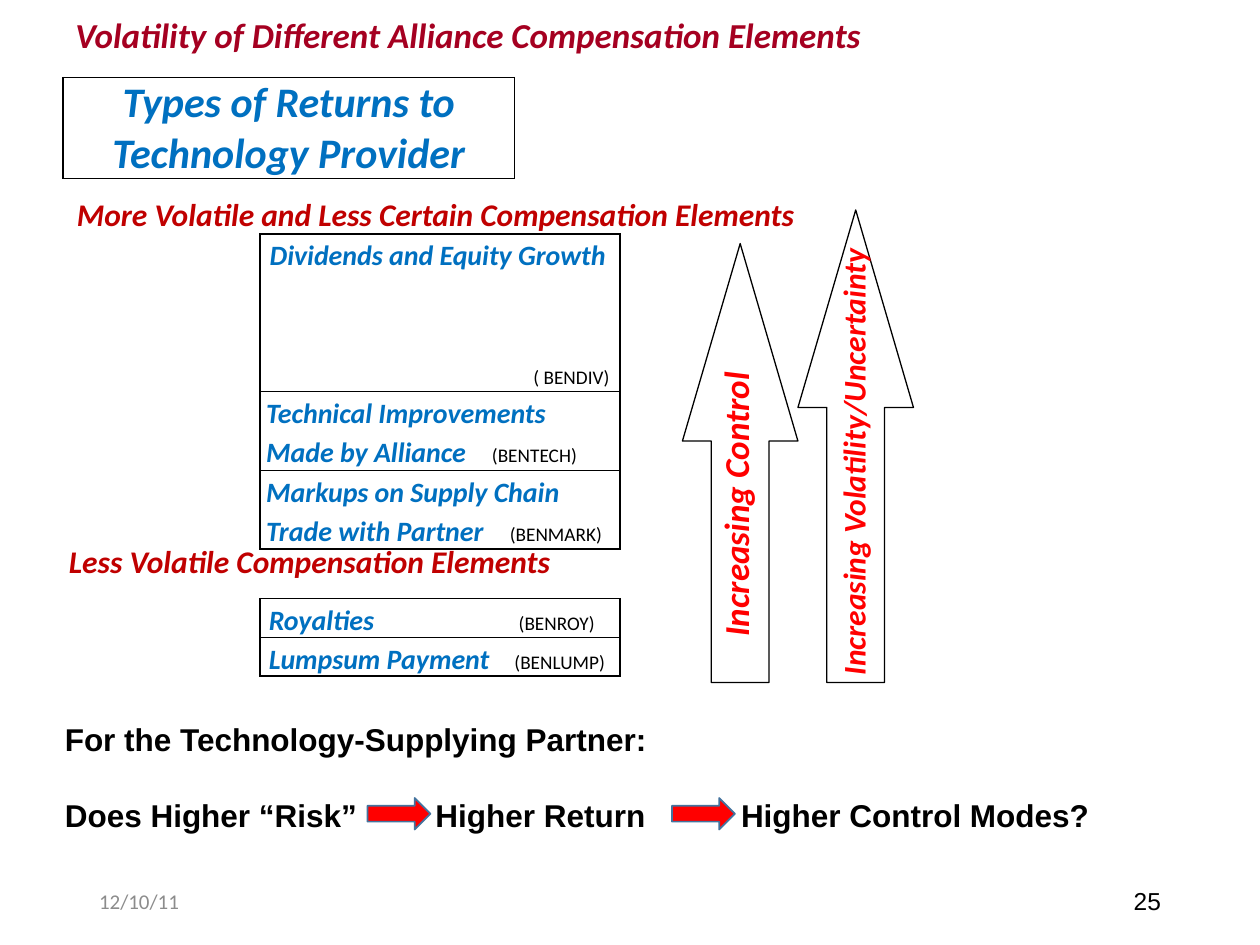
import pptx
import pptx.util
import pptx.dml.color
import pptx.enum.shapes
import pptx.enum.text
from dataclasses import dataclass
from typing import NamedTuple
from lxml import etree

Pt = pptx.util.Pt
ALIGN = pptx.enum.text.PP_ALIGN
MID = pptx.enum.text.MSO_ANCHOR.MIDDLE
SHAPE = pptx.enum.shapes.MSO_SHAPE
NS = "http://schemas.openxmlformats.org/drawingml/2006/main"

# Grid of 120 columns by 90 rows
UNIT = pptx.util.Inches(1 / 12)
COLS, ROWS = 120, 90


@dataclass(frozen=True)
class Theme:
    font: str = "Calibri"
    plain: str = "Arial"
    title: str = "A50021"
    head: str = "C00000"
    item: str = "0070C0"
    alert: str = "FF0000"
    ink: str = "000000"
    paper: str = "FFFFFF"
    muted: str = "8C8C8C"
    edge: str = "43739E"
    big: int = 24
    large: int = 20
    mid: int = 18
    body: int = 16
    page: int = 14
    date: int = 12
    code: int = 11


T = Theme()


class Box(NamedTuple):
    x: float
    y: float
    w: float
    h: float


class Run(NamedTuple):
    text: str
    size: int
    color: str
    bold: bool = True
    slant: bool = True
    font: str = T.font


class Item(NamedTuple):
    name: str
    code: str
    rows: float
    stop: float = 0  # tab stop of the code; none puts it on its own line


def grid(*vals: float) -> list[int]:
    return [round(v * UNIT) for v in vals]


def rgb(color: str):
    return pptx.dml.color.RGBColor.from_string(color)


def write(frame, *runs: Run, new=True, align=ALIGN.LEFT, lead=None, gap=0, stops=()):
    """Add one paragraph of runs; new=True fills the first paragraph."""
    para = frame.paragraphs[0] if new else frame.add_paragraph()
    para.alignment = align
    if lead:
        para.line_spacing = lead
    para.space_before = Pt(gap)
    for spec in runs:
        run = para.add_run()
        run.text = spec.text
        font = run.font
        font.name, font.size = spec.font, Pt(spec.size)
        font.bold, font.italic = spec.bold, spec.slant
        font.color.rgb = rgb(spec.color)
    if stops:
        tabs = etree.SubElement(para._p.get_or_add_pPr(), f"{{{NS}}}tabLst")
        for pos in grid(*stops):
            etree.SubElement(tabs, f"{{{NS}}}tab", pos=str(pos), algn="l")


def label(slide, box: Box, *runs: Run, turn=0, anchor=None, **fmt):
    shape = slide.shapes.add_textbox(*grid(*box))
    shape.rotation = turn
    frame = shape.text_frame
    frame.word_wrap = True
    if anchor is not None:
        frame.vertical_anchor = anchor
    write(frame, *runs, **fmt)
    return frame


def arrow(slide, kind, box: Box, fill: str, line: str, width: float, head=None):
    shape = slide.shapes.add_shape(kind, *grid(*box))
    shape.shadow.inherit = False
    shape.fill.solid()
    shape.fill.fore_color.rgb = rgb(fill)
    shape.line.color.rgb = rgb(line)
    shape.line.width = Pt(width)
    if head:
        shape.adjustments[1] = head


def frames(slide, x: float, y: float, w: float, rows: list[float], left: float, right: float):
    """Add a one-column bordered table and return its text frames."""
    table = slide.shapes.add_table(len(rows), 1, *grid(x, y, w, sum(rows))).table
    table.first_row = table.horz_banding = False
    out = []
    for i, high in enumerate(rows):
        table.rows[i].height = grid(high)[0]
        cell = table.cell(i, 0)
        cell.margin_left, cell.margin_right = grid(left, right)
        cell.margin_top = cell.margin_bottom = 0
        cell.fill.background()
        props = cell._tc.get_or_add_tcPr()
        for n, side in enumerate(("lnL", "lnR", "lnT", "lnB")):
            line = etree.Element(f"{{{NS}}}{side}", w=str(Pt(1)))
            fill = etree.SubElement(line, f"{{{NS}}}solidFill")
            etree.SubElement(fill, f"{{{NS}}}srgbClr", val=T.ink)
            props.insert(n, line)
        out.append(cell.text_frame)
    return out


def stack(slide, y: float, items: list[Item], left: float, right: float):
    cells = frames(slide, 24.75, y, 34.3, [i.rows for i in items], left, right)
    for frame, item in zip(cells, items):
        name = Run(item.name, T.body, T.item)
        code = Run(item.code, T.code, T.ink, False, False)
        if item.stop:
            name = name._replace(text=item.name + "\t")
            write(frame, name, code, lead=1.15, stops=[item.stop])
        else:
            write(frame, name, align=ALIGN.CENTER, lead=1.15)
            write(frame, code, new=False, align=ALIGN.RIGHT, lead=1.15, gap=51)


def main():
    deck = pptx.Presentation()
    deck.slide_width, deck.slide_height = grid(COLS, ROWS)
    slide = deck.slides.add_slide(deck.slide_layouts[6])

    # Footer and title
    label(slide, Box(8.25, 83.4, 27, 4.8),
          Run("12/10/11", T.date, T.muted, False, False), anchor=MID)
    label(slide, Box(84.75, 83.4, 27, 4.8),
          Run("25", T.page, T.ink, False, False, T.plain), anchor=MID, align=ALIGN.RIGHT)
    label(slide, Box(6, 0, 108, 7),
          Run("Volatility of Different Alliance Compensation Elements", T.large, T.title),
          anchor=MID, lead=0.9)

    # Tables of returns
    head, = frames(slide, 6, 7.4, 43, [9.6], 0.6, 0.6)
    write(head, Run("Types of Returns to Technology Provider", T.big, T.item), align=ALIGN.CENTER)
    stack(slide, 22.3, [
        Item("Dividends and Equity Growth", "( BENDIV)", 15),
        Item("Technical Improvements Made by Alliance", "(BENTECH)", 7.5, 21.5),
        Item("Markups on Supply Chain Trade with Partner", "(BENMARK)", 7.5, 23.2),
    ], 0.6, 1)
    stack(slide, 57, [
        Item("Royalties", "(BENROY)", 3.7, 23.8),
        Item("Lumpsum Payment", "(BENLUMP)", 3.7, 23.4),
    ], 0.85, 0.85)

    # Headings of the two groups
    for box, text in (
        (Box(6, 18, 71, 4.8), "More Volatile and Less Certain Compensation Elements"),
        (Box(5, 51, 49, 4.8), "Less Volatile Compensation Elements"),
    ):
        label(slide, box, Run(text, T.mid, T.head), align=ALIGN.CENTER)

    # Tall arrows with upright labels
    for x, y, box, text, size in (
        (76, 20, Box(41.25, 41.6, 80, 4.8), "Increasing Volatility/Uncertainty", T.mid),
        (65, 23.2, Box(30, 45.4, 80, 5.25), "Increasing Control", T.large),
    ):
        arrow(slide, SHAPE.UP_ARROW, Box(x, y, 11, 65 - y), T.paper, T.ink, 0.75, 1.71)
        label(slide, box, Run(text, size, T.alert), turn=270, anchor=MID, align=ALIGN.CENTER)

    # Closing question
    ask = Run("For the Technology-Supplying Partner:", T.mid, T.ink, True, False, T.plain)
    frame = label(slide, Box(5, 68, 103, 15.7), ask)
    line = "Does Higher “Risk”\tHigher Return\tHigher Control Modes?"
    write(frame, ask._replace(text=line), new=False, gap=22, stops=[35.3, 64.4])
    for x in (35, 64):
        arrow(slide, SHAPE.RIGHT_ARROW, Box(x, 76, 6, 3), T.alert, T.edge, 1)

    deck.save("out.pptx")


if __name__ == "__main__":
    main()
